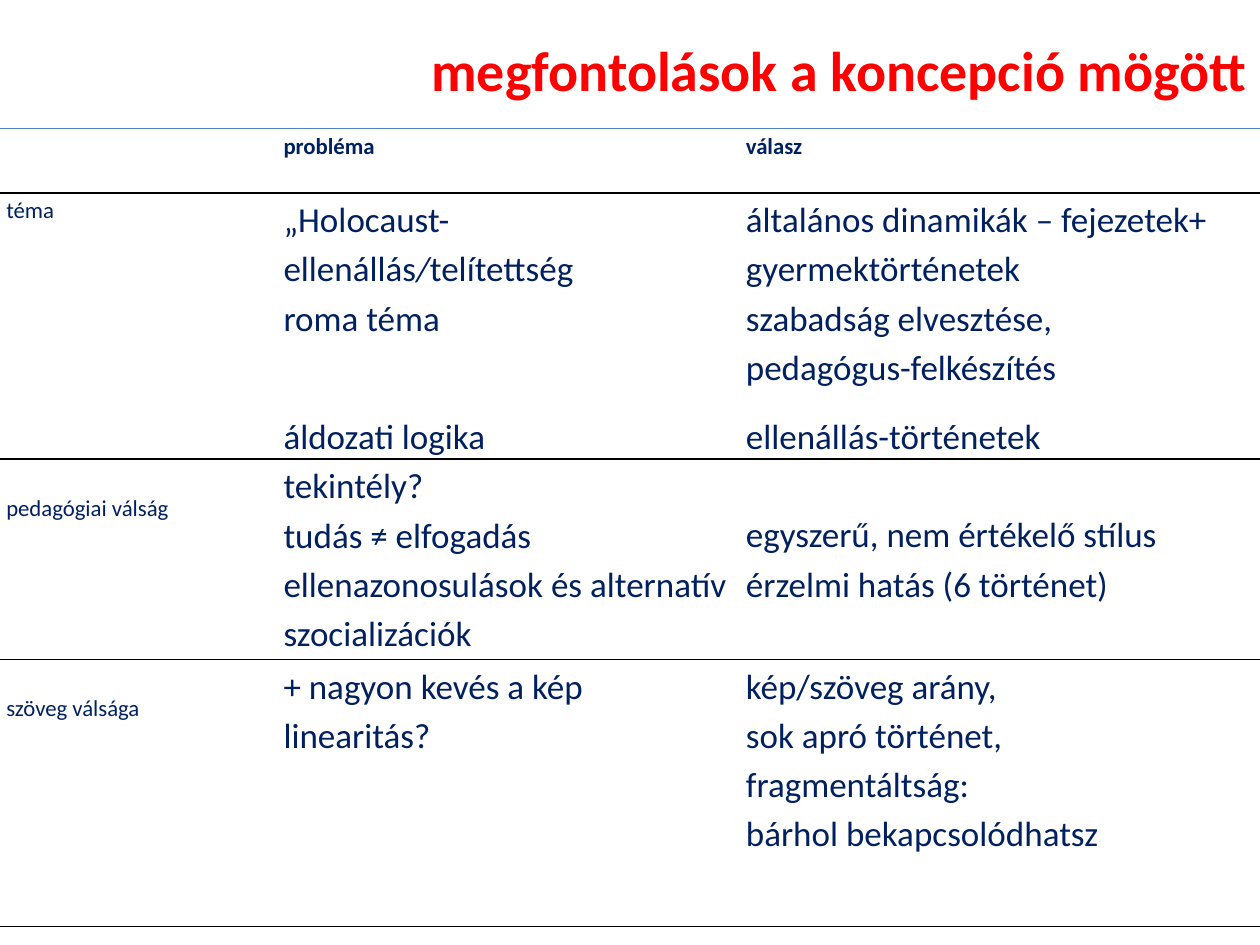
"""Build a slide with a title and a ruled table of problems and answers."""
from lxml.etree import SubElement
from pptx import Presentation
from pptx.dml.color import RGBColor
from pptx.enum.text import MSO_ANCHOR, PP_ALIGN
from pptx.oxml.ns import qn
from pptx.util import Inches, Pt

COLORS = {"title": "FF0000", "text": "002060", "top": "4F81BD", "rule": "000000"}
WIDTH, HEIGHT = 10, 7.5
COLUMNS = [2.2, 3.67, 4.13]
ROWS = [0.51, 0.71, 0.94, 0.26, 1.59, 2.12]
RULED_ROWS = {0, 3, 4, 5}
LABEL_SIZE, BODY_SIZE = 13, 20
LABEL_DROP, BODY_DROP = 0.25, 0.39

CONTENT = [
    [[], ["probléma"], ["válasz"]],
    [["téma"], ["„Holocaust- ellenállás/telítettség"],
     ["általános dinamikák – fejezetek+ gyermektörténetek"]],
    [[], ["roma téma"], ["szabadság elvesztése,", "pedagógus-felkészítés"]],
    [[], ["áldozati logika"], ["ellenállás-történetek"]],
    [["pedagógiai válság"],
     ["tekintély?", "tudás ≠ elfogadás",
      "ellenazonosulások és alternatív szocializációk"],
     ["egyszerű, nem értékelő stílus", "érzelmi hatás (6 történet)"]],
    [["szöveg válsága"], ["+ nagyon kevés a kép", "linearitás?"],
     ["kép/szöveg arány,", "sok apró történet,", "fragmentáltság:",
      "bárhol bekapcsolódhatsz"]],
]
DROPS = {(4, 0): LABEL_DROP, (4, 2): BODY_DROP, (5, 0): LABEL_DROP}
ITALIC_SLASH = (1, 1)


def write(frame, lines, size=BODY_SIZE, color="text", bold=False,
          align=PP_ALIGN.LEFT, spacing=1.15, italic_mark=None):
    """Fill a text frame with one paragraph per line."""
    for number, line in enumerate(lines):
        paragraph = frame.paragraphs[0] if number == 0 else frame.add_paragraph()
        paragraph.alignment = align
        paragraph.line_spacing = spacing
        for part in line.partition(italic_mark) if italic_mark else [line]:
            run = paragraph.add_run()
            run.text = part
            run.font.name = "Calibri"
            run.font.size = Pt(size)
            run.font.bold = bold
            run.font.italic = part == italic_mark
            run.font.color.rgb = RGBColor.from_string(COLORS[color])


def set_borders(cell, top=None, bottom=None):
    """Rule the top and bottom of a cell and clear its sides."""
    properties = cell._tc.get_or_add_tcPr()
    edges = {"a:lnL": None, "a:lnR": None, "a:lnT": top, "a:lnB": bottom}
    for place, (tag, color) in enumerate(edges.items()):
        line = SubElement(properties, qn(tag), w=str(Pt(1)))
        if color:
            fill = SubElement(line, qn("a:solidFill"))
            SubElement(fill, qn("a:srgbClr"), val=COLORS[color])
        else:
            SubElement(line, qn("a:noFill"))
        properties.insert(place, line)


def add_title(slide, text):
    """Place the title at the right edge above the table."""
    title = slide.shapes.title
    title.left, title.top = Inches(0.47), Inches(0.23)
    title.width, title.height = Inches(WIDTH - 0.47), Inches(0.64)
    title.text_frame.vertical_anchor = MSO_ANCHOR.MIDDLE
    write(title.text_frame, [text], size=32, color="title", bold=True,
          align=PP_ALIGN.RIGHT, spacing=1.0)


def format_cell(cell, row, column):
    """Set the margins, fill and rules of one cell."""
    cell.margin_left = cell.margin_right = Inches(0.05)
    cell.margin_top = Inches(DROPS.get((row, column), 0))
    cell.margin_bottom = 0
    cell.fill.background()
    above = "rule" if row - 1 in RULED_ROWS else None
    set_borders(cell, top="top" if row == 0 else above,
                bottom="rule" if row in RULED_ROWS else None)


def add_comparison(slide):
    """Add the table of themes, problems and answers."""
    table = slide.shapes.add_table(
        len(ROWS), len(COLUMNS), 0, Inches(1.02),
        Inches(WIDTH), Inches(sum(ROWS))).table
    table.first_row = table.horz_banding = False
    for column, width in zip(table.columns, COLUMNS):
        column.width = Inches(width)
    for row, height in zip(table.rows, ROWS):
        row.height = Inches(height)
    for row, texts in enumerate(CONTENT):
        for column, lines in enumerate(texts):
            cell = table.cell(row, column)
            format_cell(cell, row, column)
            small = row == 0 or column == 0
            write(cell.text_frame, lines, bold=row == 0,
                  size=LABEL_SIZE if small else BODY_SIZE,
                  italic_mark="/" if (row, column) == ITALIC_SLASH else None)


def main():
    """Build and save the slide."""
    deck = Presentation()
    deck.slide_width, deck.slide_height = Inches(WIDTH), Inches(HEIGHT)
    slide = deck.slides.add_slide(deck.slide_layouts.get_by_name("Title Only"))
    add_title(slide, "megfontolások a koncepció mögött")
    add_comparison(slide)
    deck.save("out.pptx")


if __name__ == "__main__":
    main()
